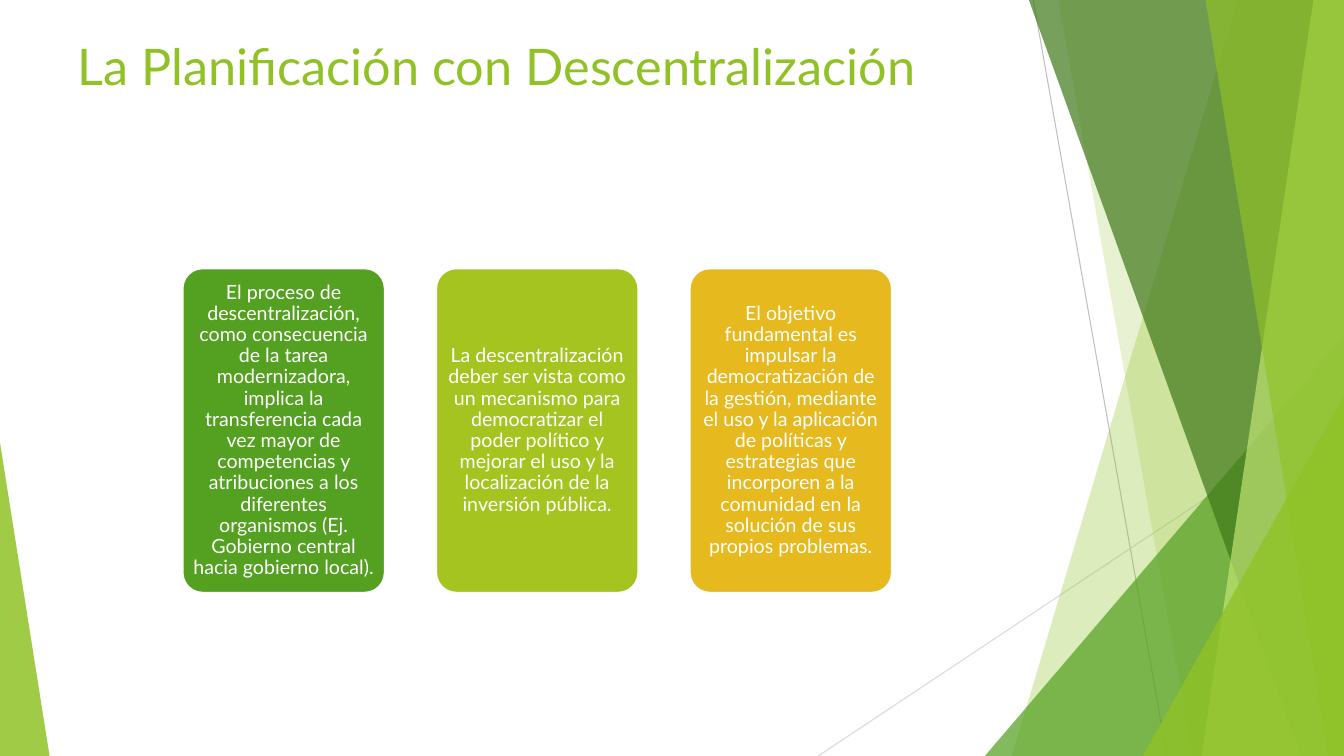
from lxml import etree
from pptx import Presentation
from pptx.dml.color import RGBColor
from pptx.enum import shapes, text
from pptx.oxml.ns import qn
from pptx.util import Cm, Pt

WIDE, HIGH = 33.87, 19.05
GREEN = "90C226"
RAYS = [
    ((26.04, 0, 29.41, HIGH), "BFBFBF"),
    ((WIDE, 10.24, 20.62, HIGH), "D9D9D9"),
]
BACK = [(31.19, 25.5, GREEN, 30), (26.67, 30.05, GREEN, 20)]
FRONT = [
    (25.93, 32.79, "3F7819", 70),
    (33.1, 30.28, "C0E474", 70),
    (30.38, 33.48, GREEN, 65),
]
CARDS = [
    ("54A021", "El proceso de descentralización, como consecuencia de la tarea "
     "modernizadora, implica la transferencia cada vez mayor de competencias y "
     "atribuciones a los diferentes organismos (Ej. Gobierno central hacia "
     "gobierno local)."),
    ("A5C41F", "La descentralización deber ser vista como un mecanismo para "
     "democratizar el poder político y mejorar el uso y la localización de la "
     "inversión pública."),
    ("E6B91E", "El objetivo fundamental es impulsar la democratización de la "
     "gestión, mediante el uso y la aplicación de políticas y estrategias que "
     "incorporen a la comunidad en la solución de sus propios problemas."),
]


def apply(item, values):
    """Set each attribute of item from a dict."""
    for name, value in values.items():
        setattr(item, name, value)


def paint(target, color):
    """Give a fill a solid colour from a hex string."""
    target.solid()
    target.fore_color.rgb = RGBColor.from_string(color)


def glaze(shape, color, alpha):
    """Fill a shape with a see-through colour and no outline."""
    shape.shadow.inherit = False
    paint(shape.fill, color)
    shape.line.fill.background()
    tint = next(shape.fill._xPr.iter(qn("a:srgbClr")))
    etree.SubElement(tint, qn("a:alpha"), val=str(alpha * 1000))


def write(shape, words, size, color, frame, para):
    """Put one formatted paragraph into a shape."""
    body = shape.text_frame
    body.text = words
    apply(body, {"word_wrap": True, "auto_size": text.MSO_AUTO_SIZE.NONE, **frame})
    line = body.paragraphs[0]
    apply(line, para)
    apply(line.font, {"name": "Lato", "size": Pt(size)})
    paint(line.font.fill, color)


def ray(slide, ends, color):
    """Draw a thin straight line."""
    line = slide.shapes.add_connector(
        shapes.MSO_CONNECTOR.STRAIGHT, *map(Cm, ends))
    line.line.width = Pt(0.75)
    paint(line.line.fill, color)
    etree.SubElement(line._element.spPr, qn("a:effectLst"))


def facet(slide, top, foot, color, alpha):
    """Draw a full-height band from a slanted edge to the right side."""
    pen = slide.shapes.build_freeform(Cm(top), 0, scale=1.0)
    edge = [(WIDE, 0), (WIDE, HIGH), (foot, HIGH)]
    pen.add_line_segments([(Cm(x), Cm(y)) for x, y in edge], close=True)
    glaze(pen.convert_to_shape(), color, alpha)


def wedge(slide, box, tip, color, alpha):
    """Draw a right-angled triangle with its tip at 0 left or 1 right."""
    shape = slide.shapes.add_shape(
        shapes.MSO_SHAPE.ISOSCELES_TRIANGLE, *map(Cm, box))
    shape.adjustments[0] = tip
    glaze(shape, color, alpha)


def card(slide, left, color, words):
    """Draw a rounded card with centred white text."""
    shape = slide.shapes.add_shape(
        shapes.MSO_SHAPE.ROUNDED_RECTANGLE, *map(Cm, (left, 6.76, 5.1, 8.18)))
    shape.adjustments[0] = 0.1
    shape.shadow.inherit = False
    paint(shape.fill, color)
    paint(shape.line.fill, "FFFFFF")
    shape.line.width = Pt(1.5)
    frame = {"vertical_anchor": text.MSO_ANCHOR.MIDDLE,
             "margin_left": Cm(0.08), "margin_right": Cm(0.08),
             "margin_top": Cm(0.05), "margin_bottom": Cm(0.05)}
    para = {"alignment": text.PP_ALIGN.CENTER, "line_spacing": 0.9}
    write(shape, words, 14, "FFFFFF", frame, para)


def main():
    """Build and save the slide."""
    deck = Presentation()
    apply(deck, {"slide_width": Cm(WIDE), "slide_height": Cm(HIGH)})
    slide = deck.slides.add_slide(deck.slide_layouts[5])
    for ends, color in RAYS:
        ray(slide, ends, color)
    for band in BACK:
        facet(slide, *band)
    wedge(slide, (24.82, 8.46, 9.05, 10.59), 1, "54A021", 72)
    for band in FRONT:
        facet(slide, *band)
    wedge(slide, (28.8, 9.98, 5.07, 9.07), 1, GREEN, 80)
    wedge(slide, (0, 11.15, 1.25, 7.9), 0, GREEN, 85)
    title = slide.shapes.title
    apply(title, {"left": Cm(1.7), "top": Cm(0.76),
                  "width": Cm(30.48), "height": Cm(3.18)})
    write(title, "La Planificación con Descentralización", 36, GREEN,
          {"vertical_anchor": text.MSO_ANCHOR.TOP},
          {"alignment": text.PP_ALIGN.LEFT})
    for i, (color, words) in enumerate(CARDS):
        card(slide, 4.6 + 6.39 * i, color, words)
    deck.save("out.pptx")


if __name__ == "__main__":
    main()
